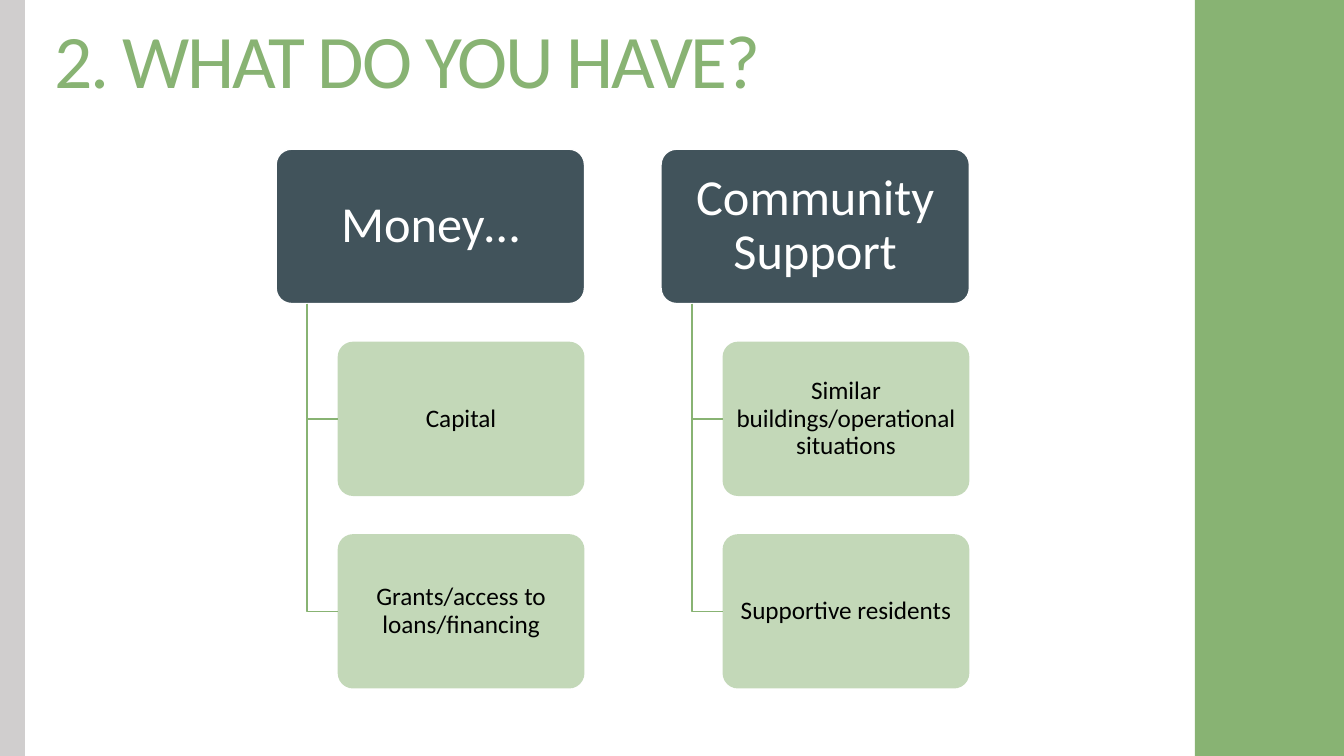
from pptx import Presentation
from pptx.dml.color import RGBColor
from pptx.enum.shapes import MSO_SHAPE as Shape
from pptx.enum.text import MSO_ANCHOR as Anchor, PP_ALIGN as Align
from pptx.oxml.ns import qn
from pptx.util import Cm, Pt
from lxml.etree import SubElement

GREEN, SLATE, GREY = "88B373", "41535B", "D0CECE"
WHITE, BLACK = "FFFFFF", "000000"
WIDTH, HEIGHT = 33.87, 19.05

COLUMNS = [
    ("Money…", ["Capital", "Grants/access to loans/financing"]),
    ("Community Support", ["Similar buildings/operational situations", "Supportive residents"]),
]
COLUMN_LEFT, COLUMN_STEP = 6.96, 9.7
ROW_TOP, ROW_STEP = 3.76, 4.85
HEAD_WIDTH, ITEM_WIDTH, BOX_HEIGHT = 7.77, 6.22, 3.89
TRUNK_INDENT, ITEM_INDENT = 0.78, 1.55


def color(hex_string):
    return RGBColor.from_string(hex_string)


class SlideBuilder:
    def __init__(self, slide, font="Calibri"):
        self.slide = slide
        self.font = font

    def style(self, paragraph, size, font_color):
        paragraph.font.name = self.font
        paragraph.font.size = Pt(size)
        paragraph.font.color.rgb = color(font_color)
        paragraph.line_spacing = 0.9

    def block(self, kind, left, top, width, height, fill, opacity=100):
        shape = self.slide.shapes.add_shape(kind, Cm(left), Cm(top), Cm(width), Cm(height))
        shape.shadow.inherit = False
        shape.fill.solid()
        shape.fill.fore_color.rgb = color(fill)
        shape.line.fill.background()
        if opacity < 100:
            fill_color = shape.fill._xPr.find(qn("a:solidFill"))[0]
            SubElement(fill_color, qn("a:alpha"), val=str(opacity * 1000))
        return shape

    def box(self, text, left, top, width, fill, font_color, size, margins, opacity=100):
        """Add a rounded box with centred text; margins are (sides, top and bottom)."""
        shape = self.block(Shape.ROUNDED_RECTANGLE, left, top, width, BOX_HEIGHT, fill, opacity)
        shape.adjustments[0] = 0.1
        frame = shape.text_frame
        frame.word_wrap = True
        frame.vertical_anchor = Anchor.MIDDLE
        frame.margin_left = frame.margin_right = Cm(margins[0])
        frame.margin_top = frame.margin_bottom = Cm(margins[1])
        paragraph = frame.paragraphs[0]
        paragraph.text = text
        paragraph.alignment = Align.CENTER
        self.style(paragraph, size, font_color)
        return shape

    def elbow(self, left, top, right, bottom):
        """Draw a line down from the left top, then across to the right."""
        builder = self.slide.shapes.build_freeform(Cm(left), Cm(top))
        builder.add_line_segments([(Cm(left), Cm(bottom)), (Cm(right), Cm(bottom))], close=False)
        shape = builder.convert_to_shape()
        shape.shadow.inherit = False
        shape.fill.background()
        shape.line.color.rgb = color(GREEN)
        shape.line.width = Pt(1)

    def title(self, text, left, top, width, height):
        frame = self.slide.shapes.add_textbox(Cm(left), Cm(top), Cm(width), Cm(height)).text_frame
        frame.word_wrap = True
        paragraph = frame.paragraphs[0]
        run = paragraph.add_run()
        run.text = text
        run.font._element.set("spc", "-150")
        self.style(paragraph, 54, GREEN)

    def column(self, left, heading, items):
        head = self.box(heading, left, ROW_TOP, HEAD_WIDTH, SLATE, WHITE, 36, (0.3, 0.25))
        head.line.color.rgb = color(WHITE)
        head.line.width = Pt(1)
        item_left = left + ITEM_INDENT
        for row, item in enumerate(items, 1):
            top = ROW_TOP + row * ROW_STEP
            self.elbow(left + TRUNK_INDENT, ROW_TOP + BOX_HEIGHT, item_left, top + BOX_HEIGHT / 2)
            self.box(item, item_left, top, ITEM_WIDTH, GREEN, BLACK, 18, (0.22, 0.2), opacity=50)


def main():
    presentation = Presentation()
    presentation.slide_width, presentation.slide_height = Cm(WIDTH), Cm(HEIGHT)
    builder = SlideBuilder(presentation.slides.add_slide(presentation.slide_layouts[6]))
    builder.block(Shape.RECTANGLE, 30.11, 0, WIDTH - 30.11, HEIGHT, GREEN)
    builder.block(Shape.RECTANGLE, 0, 0, 0.63, HEIGHT, GREY)
    for index, (heading, items) in enumerate(COLUMNS):
        builder.column(COLUMN_LEFT + index * COLUMN_STEP, heading, items)
    builder.title("2. WHAT DO YOU HAVE?", 1.12, 0.46, 18.97, 2.34)
    presentation.save("out.pptx")


if __name__ == "__main__":
    main()
